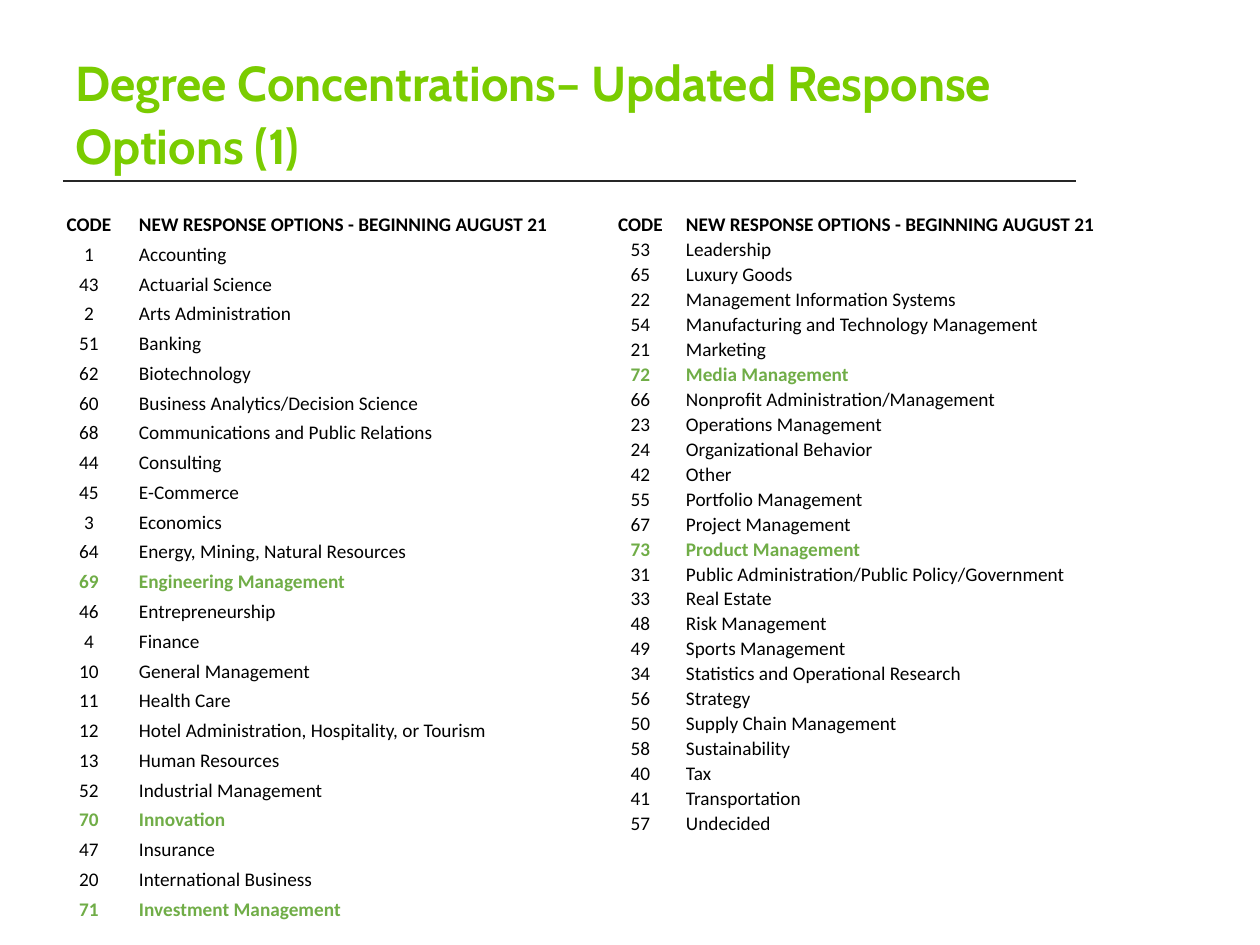
from dataclasses import dataclass

import pptx
import pptx.dml.color
import pptx.enum.shapes
import pptx.enum.text
import pptx.oxml.ns
import pptx.util
from lxml import etree

EMU_PER_PX = 914400 // 126


@dataclass(frozen=True)
class Theme:
    title_font: str = "Cabin"
    table_font: str = "Calibri"
    title_size: int = 28
    title_leading: int = 36
    table_size: int = 11
    title_color: str = "7ACC00"
    rule_color: str = "262626"
    text_color: str = "000000"
    new_color: str = "70AD47"


THEME = Theme()

HEADER = ("CODE", "NEW RESPONSE OPTIONS - BEGINNING AUGUST 21")
NEW_CODES = {69, 70, 71, 72, 73}

FIRST_OPTIONS = [
    (1, "Accounting"),
    (43, "Actuarial Science"),
    (2, "Arts Administration"),
    (51, "Banking"),
    (62, "Biotechnology"),
    (60, "Business Analytics/Decision Science"),
    (68, "Communications and Public Relations"),
    (44, "Consulting"),
    (45, "E-Commerce"),
    (3, "Economics"),
    (64, "Energy, Mining, Natural Resources"),
    (69, "Engineering Management"),
    (46, "Entrepreneurship"),
    (4, "Finance"),
    (10, "General Management"),
    (11, "Health Care"),
    (12, "Hotel Administration, Hospitality, or Tourism"),
    (13, "Human Resources"),
    (52, "Industrial Management"),
    (70, "Innovation"),
    (47, "Insurance"),
    (20, "International Business"),
    (71, "Investment Management"),
]

SECOND_OPTIONS = [
    (53, "Leadership"),
    (65, "Luxury Goods"),
    (22, "Management Information Systems"),
    (54, "Manufacturing and Technology Management"),
    (21, "Marketing"),
    (72, "Media Management"),
    (66, "Nonprofit Administration/Management"),
    (23, "Operations Management"),
    (24, "Organizational Behavior"),
    (42, "Other"),
    (55, "Portfolio Management"),
    (67, "Project Management"),
    (73, "Product Management"),
    (31, "Public Administration/Public Policy/Government"),
    (33, "Real Estate"),
    (48, "Risk Management"),
    (49, "Sports Management"),
    (34, "Statistics and Operational Research"),
    (56, "Strategy"),
    (50, "Supply Chain Management"),
    (58, "Sustainability"),
    (40, "Tax"),
    (41, "Transportation"),
    (57, "Undecided"),
]


def px(length):
    return pptx.util.Emu(length * EMU_PER_PX)


def rgb(color):
    return pptx.dml.color.RGBColor.from_string(color)


def style_font(font, name, size, color, bold):
    font.name = name
    font.size = pptx.util.Pt(size)
    font.color.rgb = rgb(color)
    font.bold = bold


def set_title(slide, text, left, top, width, height):
    title = slide.shapes.title
    title.left, title.top = px(left), px(top)
    title.width, title.height = px(width), px(height)
    frame = title.text_frame
    frame.text = text
    frame.word_wrap = True
    frame.auto_size = pptx.enum.text.MSO_AUTO_SIZE.NONE
    frame.vertical_anchor = pptx.enum.text.MSO_ANCHOR.BOTTOM
    paragraph = frame.paragraphs[0]
    paragraph.alignment = pptx.enum.text.PP_ALIGN.LEFT
    paragraph.line_spacing = pptx.util.Pt(THEME.title_leading)
    style_font(paragraph.font, THEME.title_font, THEME.title_size, THEME.title_color, True)


def add_rule(slide, left, right, y):
    rule = slide.shapes.add_connector(
        pptx.enum.shapes.MSO_CONNECTOR.STRAIGHT, px(left), px(y), px(right), px(y)
    )
    rule.line.color.rgb = rgb(THEME.rule_color)
    rule.line.width = pptx.util.Pt(1.5)
    properties = rule._element.spPr
    etree.SubElement(properties, pptx.oxml.ns.qn("a:effectLst"))


def fill_cell(cell, text, alignment, color, bold, bottom_margin):
    cell.fill.background()
    cell.vertical_anchor = pptx.enum.text.MSO_ANCHOR.BOTTOM
    cell.margin_left = cell.margin_right = cell.margin_top = px(1)
    cell.margin_bottom = px(bottom_margin)
    cell.text = text
    paragraph = cell.text_frame.paragraphs[0]
    paragraph.alignment = alignment
    style_font(paragraph.font, THEME.table_font, THEME.table_size, color, bold)


def add_code_table(slide, options, left, top, column_widths, row_height, bottom_margin):
    rows = [HEADER, *options]
    table = slide.shapes.add_table(
        len(rows), len(column_widths), px(left), px(top),
        px(sum(column_widths)), px(row_height * len(rows)),
    ).table
    table.first_row = False
    table.horz_banding = False
    for column, width in zip(table.columns, column_widths):
        column.width = px(width)
    alignments = (pptx.enum.text.PP_ALIGN.CENTER, pptx.enum.text.PP_ALIGN.LEFT)
    for row, values in zip(table.rows, rows):
        row.height = px(row_height)
        is_new = values[0] in NEW_CODES
        color = THEME.new_color if is_new else THEME.text_color
        bold = is_new or values is HEADER
        for cell, value, alignment in zip(row.cells, values, alignments):
            fill_cell(cell, str(value), alignment, color, bold, bottom_margin)


def main():
    presentation = pptx.Presentation()
    presentation.slide_width, presentation.slide_height = px(1260), px(945)
    slide = presentation.slides.add_slide(presentation.slide_layouts[5])

    # Title and the rule beneath it
    add_rule(slide, 63, 1076, 181)
    set_title(slide, "Degree Concentrations– Updated Response Options (1)", 63, 44, 1013, 137)

    # Response options, in two side-by-side tables
    add_code_table(slide, SECOND_OPTIONS, 596, 212, (89, 415), 25, 0)
    add_code_table(slide, FIRST_OPTIONS, 40, 212, (98, 457), 26, 5)

    presentation.save("out.pptx")


if __name__ == "__main__":
    main()
